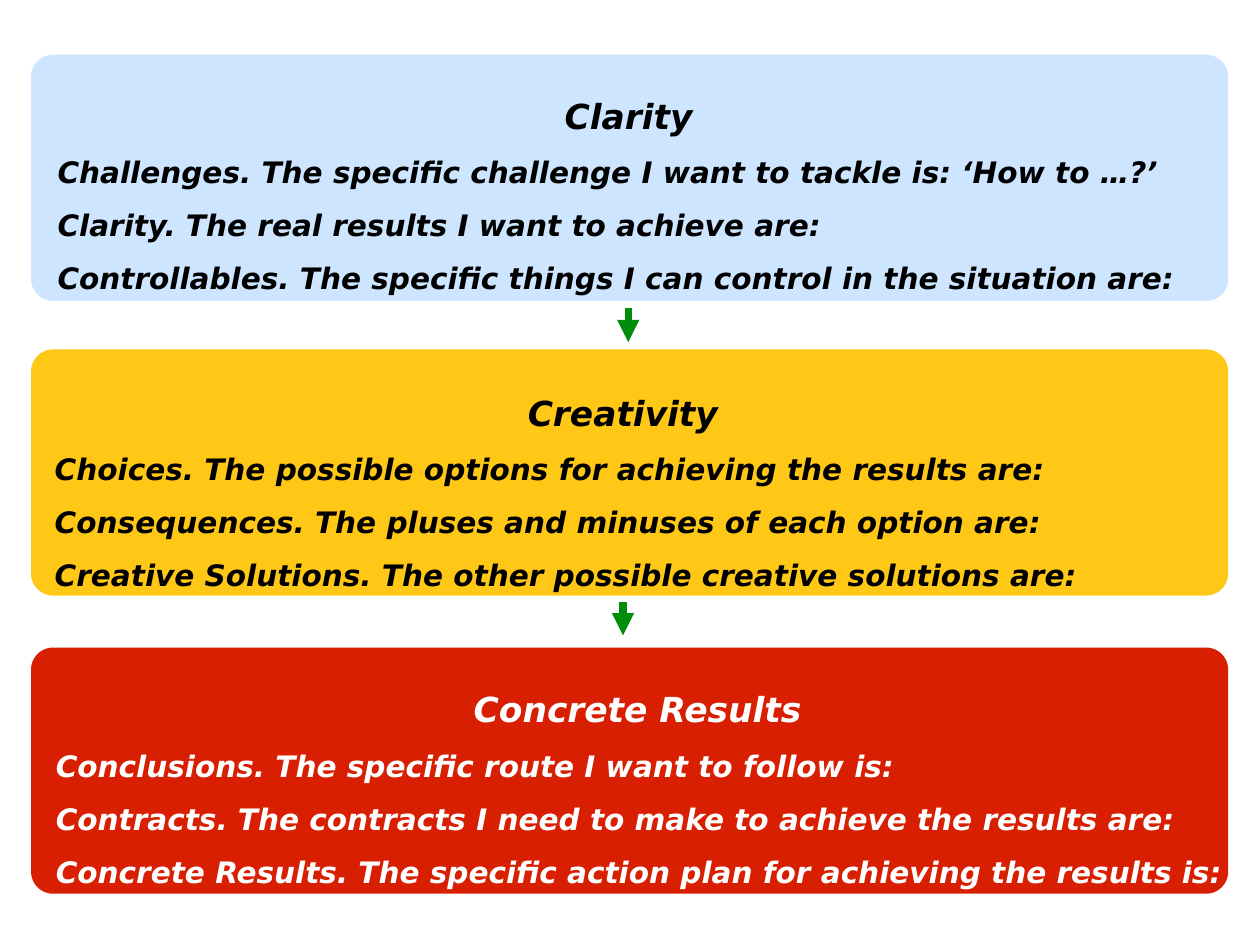
from lxml import etree
from pptx import Presentation
from pptx.dml.color import RGBColor
from pptx.enum.shapes import MSO_CONNECTOR as CONN, MSO_SHAPE as SHAPE
from pptx.enum.text import MSO_ANCHOR as ANCHOR, PP_ALIGN as ALIGN
from pptx.oxml.ns import qn
from pptx.util import Cm, Pt

COLORS = {"blue": "CDE5FF", "yellow": "FFC817", "red": "D81F01",
          "green": "008D0A", "black": "000000", "white": "FFFFFF"}
FONT = "DejaVu Sans"
PANELS = [
    (1.57, "blue", "black", (1.22, 2.03, 33.6), "Clarity", [
        "Challenges. The specific challenge I want to tackle is: ‘How to …?’",
        "Clarity. The real results I want to achieve are:",
        "Controllables. The specific things I can control in the situation are:"]),
    (10.02, "yellow", "black", (1.14, 10.54, 33.43), "Creativity", [
        "Choices. The possible options for achieving the results are:",
        "Consequences. The pluses and minuses of each option are:",
        "Creative Solutions. The other possible creative solutions are:"]),
    (18.57, "red", "white", (1.17, 19.05, 34.21), "Concrete Results", [
        "Conclusions. The specific route I want to follow is:",
        "Contracts. The contracts I need to make to achieve the results are:",
        "Concrete Results. The specific action plan for achieving the results is:"]),
]
ARROWS = [(18.01, 8.84), (17.86, 17.25)]


def rgb(name):
    return RGBColor.from_string(COLORS[name])


def add_line(p, text, size, color):
    p.line_spacing = 1.5
    r = p.add_run()
    r.text = text
    r.font.name = FONT
    r.font.size = Pt(size)
    r.font.bold = r.font.italic = True
    r.font.color.rgb = rgb(color)


prs = Presentation()
prs.slide_width, prs.slide_height = Cm(36.12), Cm(27.1)
slide = prs.slides.add_slide(prs.slide_layouts[6])

for top, fill, color, (text_left, text_top, text_width), title, items in PANELS:
    sp = slide.shapes.add_shape(SHAPE.ROUNDED_RECTANGLE, Cm(0.89), Cm(top), Cm(34.32), Cm(7.06))
    sp.adjustments[0] = 0.09
    sp.shadow.inherit = False
    sp.fill.solid()
    sp.fill.fore_color.rgb = rgb(fill)
    sp.line.fill.background()

    box = slide.shapes.add_textbox(Cm(text_left), Cm(text_top), Cm(text_width), Cm(6.1))
    tf = box.text_frame
    tf.word_wrap = True
    tf.vertical_anchor = ANCHOR.TOP
    tf.margin_left = tf.margin_right = tf.margin_top = tf.margin_bottom = Cm(0.1)
    p = tf.paragraphs[0]
    p.alignment = ALIGN.CENTER
    add_line(p, title, 28, color)
    for item in items:
        p = tf.add_paragraph()
        p.alignment = ALIGN.LEFT
        pPr = p._p.get_or_add_pPr()
        pPr.set("marL", str(Cm(1.78)))
        pPr.set("indent", str(Cm(-1.45)))
        add_line(p, item, 24, color)

for x, y in ARROWS:
    arrow = slide.shapes.add_connector(CONN.STRAIGHT, Cm(x), Cm(y), Cm(x), Cm(y + 0.97))
    arrow.line.color.rgb = rgb("green")
    arrow.line.width = Pt(6)
    etree.SubElement(arrow.line._get_or_add_ln(), qn("a:tailEnd"), type="triangle")
    etree.SubElement(arrow._element.spPr, qn("a:effectLst"))

prs.save("out.pptx")
